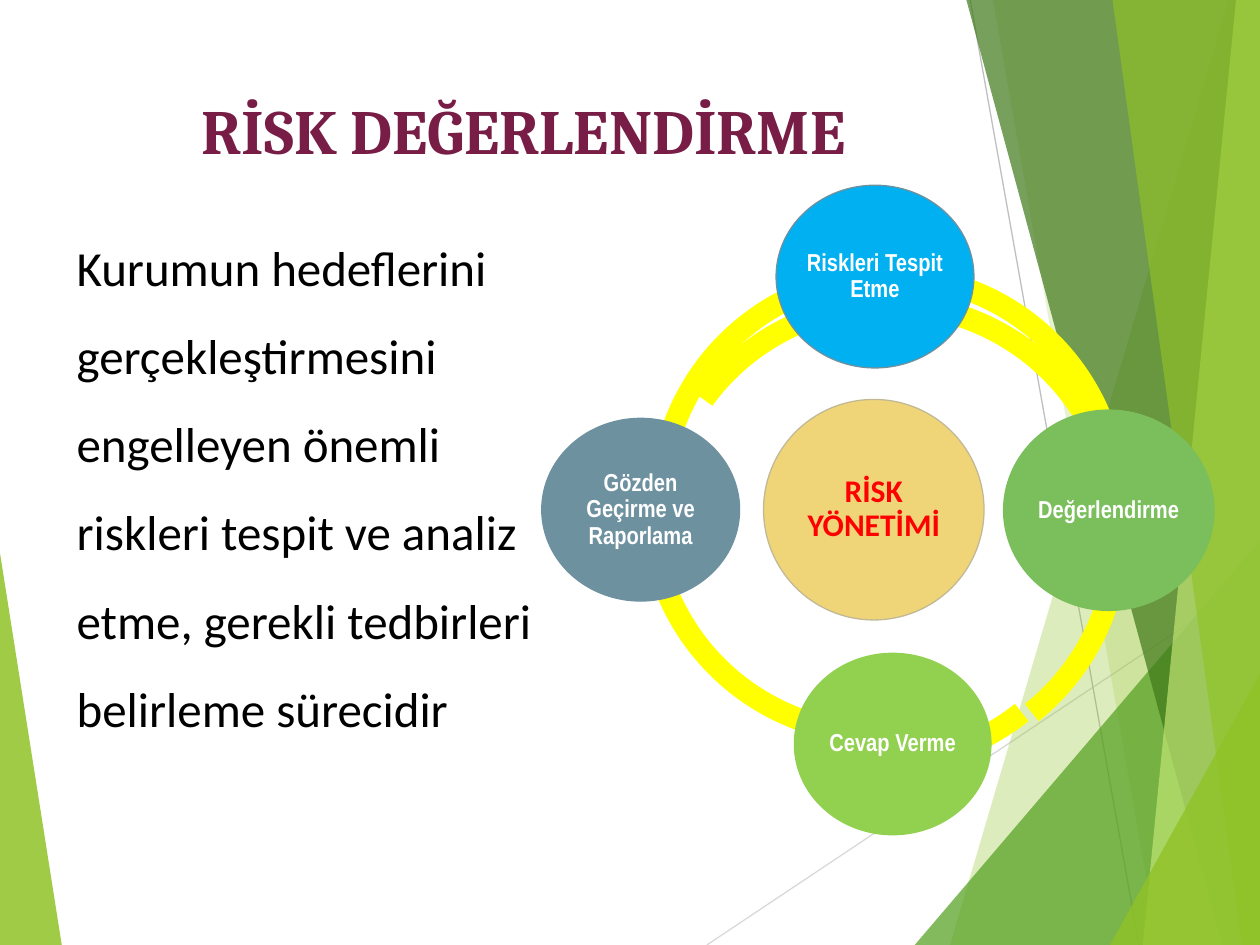
import dataclasses

import pptx
import pptx.dml.color
import pptx.enum.shapes
import pptx.enum.text
import pptx.oxml
import pptx.oxml.ns
import pptx.util

Inches = pptx.util.Inches
Pt = pptx.util.Pt
SHAPE = pptx.enum.shapes.MSO_SHAPE
ALIGN = pptx.enum.text.PP_ALIGN
ANCHOR = pptx.enum.text.MSO_ANCHOR


@dataclasses.dataclass(frozen=True)
class Theme:
    """Colours, fonts and type sizes of the slide."""
    leaf: str = "90C226"
    grass: str = "54A021"
    forest: str = "3F7819"
    lime: str = "C0E474"
    pale_line: str = "D9D9D9"
    grey_line: str = "BFBFBF"
    plum: str = "781E46"
    black: str = "000000"
    white: str = "FFFFFF"
    red: str = "FF0000"
    ring: str = "FFFF00"
    sand: str = "F0D578"
    sand_edge: str = "C1B995"
    sky: str = "00B0F0"
    slate: str = "6E91A0"
    green: str = "7BBE5C"
    bright_green: str = "92D050"
    title_font: str = "Cambria"
    body_font: str = "Calibri"
    step_font: str = "Arial Narrow"
    title_size: int = 36
    body_size: int = 28
    core_size: int = 18
    step_size: int = 14
    hairline: float = 0.75


THEME = Theme()


def rgb(colour):
    """Return an RGB colour from its hex form."""
    return pptx.dml.color.RGBColor.from_string(colour)


def apply(target, values):
    """Set each attribute in values on target."""
    for name, value in values.items():
        setattr(target, name, value)


def paint(shape, fill, edge=None):
    """Give a shape a flat fill and an optional hairline edge."""
    shape.shadow.inherit = False
    shape.fill.solid()
    shape.fill.fore_color.rgb = rgb(fill)
    if edge:
        shape.line.color.rgb = rgb(edge)
        shape.line.width = Pt(THEME.hairline)
    else:
        shape.line.fill.background()


def add_facet(slide, corners, fill, opacity):
    """Draw a translucent polygon of the backdrop."""
    points = [(Inches(x), Inches(y)) for x, y in corners]
    builder = slide.shapes.build_freeform(*points[0])
    builder.add_line_segments(points[1:], close=True)
    facet = builder.convert_to_shape()
    paint(facet, fill)
    colour = facet.fill._xPr.find(".//" + pptx.oxml.ns.qn("a:srgbClr"))
    alpha = pptx.oxml.parse_xml(
        f'<a:alpha {pptx.oxml.ns.nsdecls("a")} val="{opacity * 1000}"/>')
    colour.append(alpha)


def add_ray(slide, start, end, colour):
    """Draw a thin straight line of the backdrop."""
    ray = slide.shapes.add_connector(
        pptx.enum.shapes.MSO_CONNECTOR.STRAIGHT,
        *(Inches(value) for value in start + end))
    ray.line.color.rgb = rgb(colour)
    ray.line.width = Pt(THEME.hairline)
    ray._element.spPr.append(
        pptx.oxml.parse_xml(f'<a:effectLst {pptx.oxml.ns.nsdecls("a")}/>'))


def write(shape, text, frame_format, paragraph_format, font_format, colour):
    """Fill a shape with one formatted paragraph."""
    frame = shape.text_frame
    apply(frame, {"word_wrap": True, **frame_format})
    paragraph = frame.paragraphs[0]
    apply(paragraph, paragraph_format)
    run = paragraph.add_run()
    run.text = text
    apply(run.font, font_format)
    run.font.color.rgb = rgb(colour)


def add_text(slide, box, text, *formats):
    """Add a text box with one formatted paragraph."""
    write(slide.shapes.add_textbox(*map(Inches, box)), text, *formats)


def add_arc(slide, left, top, start, end):
    """Draw one section of the ring between two angles in degrees."""
    arc = slide.shapes.add_shape(
        SHAPE.BLOCK_ARC, *map(Inches, (left, top, 3.81, 3.81)))
    for index, value in enumerate((start * 0.6, end * 0.6, 0.046)):
        arc.adjustments[index] = value
    paint(arc, THEME.ring)


def add_circle(slide, box, text, fill, edge=None, font=THEME.step_font,
               size=THEME.step_size, colour=THEME.white, inset=0):
    """Draw a labelled ellipse of the cycle."""
    circle = slide.shapes.add_shape(SHAPE.OVAL, *map(Inches, box))
    paint(circle, fill, edge)
    margins = {f"margin_{side}": Inches(inset)
               for side in ("left", "top", "right", "bottom")}
    write(circle, text, {"vertical_anchor": ANCHOR.MIDDLE, **margins},
          {"alignment": ALIGN.CENTER, "line_spacing": 0.9},
          {"name": font, "size": Pt(size), "bold": True}, colour)


def add_backdrop(slide):
    """Draw the green facets and the two rays."""
    add_facet(slide, [(0, 4.39), (0.49, 7.5), (0, 7.5)], THEME.leaf, 85)
    add_ray(slide, (5.61, 7.5), (10, 4.57), THEME.pale_line)
    add_ray(slide, (7.7, 0), (9.04, 7.5), THEME.grey_line)
    right_facets = [
        (9.75, 0, 7.54, THEME.leaf, 30),
        (7.88, 0, 9.19, THEME.leaf, 20),
        (10, 4.29, 7.26, THEME.grass, 72),
        (7.67, 0, 9.7, THEME.forest, 70),
        (9.81, 0, 9.07, THEME.lime, 70),
        (8.83, 0, 9.86, THEME.leaf, 65),
        (10, 5.35, 8.81, THEME.leaf, 80),
    ]
    for top_x, top_y, bottom_x, fill, opacity in right_facets:
        corners = [(top_x, top_y), (bottom_x, 7.5), (10, 7.5)]
        if top_x < 10:
            corners.append((10, top_y))
        add_facet(slide, corners, fill, opacity)


def add_cycle(slide):
    """Draw the ring, its core and the four steps."""
    for arc in [(5.07, 2.1, 108, 162), (5.07, 2.33, 51.39, 108.1),
                (5.15, 2.33, 215.9, 51.39), (5.15, 2.1, 162, 0)]:
        add_arc(slide, *arc)
    add_circle(slide, (6.06, 3.17, 1.75, 1.75), "RİSK YÖNETİMİ",
               THEME.sand, THEME.sand_edge, THEME.body_font,
               THEME.core_size, THEME.red, 0.03)
    steps = [
        ((6.16, 1.47, 1.57, 1.45), "Riskleri Tespit Etme", THEME.sky, THEME.slate),
        ((7.96, 3.25, 1.68, 1.6), "Değerlendirme", THEME.green),
        ((6.3, 5.18, 1.57, 1.45), "Cevap Verme", THEME.bright_green),
        ((4.3, 3.32, 1.57, 1.45), "Gözden Geçirme ve Raporlama",
         THEME.slate, THEME.slate),
    ]
    for step in steps:
        add_circle(slide, *step)


def main():
    """Build and save the slide."""
    deck = pptx.Presentation()
    apply(deck, {"slide_width": Inches(10), "slide_height": Inches(7.5)})
    slide = deck.slides.add_slide(deck.slide_layouts[6])
    add_backdrop(slide)
    add_text(slide, (1.01, 0.68, 5.96, 0.91), "RİSK DEĞERLENDİRME",
             {"margin_left": Inches(0.43)}, {"alignment": ALIGN.CENTER},
             {"name": THEME.title_font, "size": Pt(THEME.title_size),
              "bold": True}, THEME.plum)
    add_text(slide, (0.51, 1.6, 4.02, 4.27),
             "Kurumun hedeflerini gerçekleştirmesini engelleyen önemli "
             "riskleri tespit ve analiz etme, gerekli tedbirleri "
             "belirleme sürecidir",
             {}, {"line_spacing": 1.5},
             {"name": THEME.body_font, "size": Pt(THEME.body_size)},
             THEME.black)
    add_cycle(slide)
    deck.save("out.pptx")


if __name__ == "__main__":
    main()
